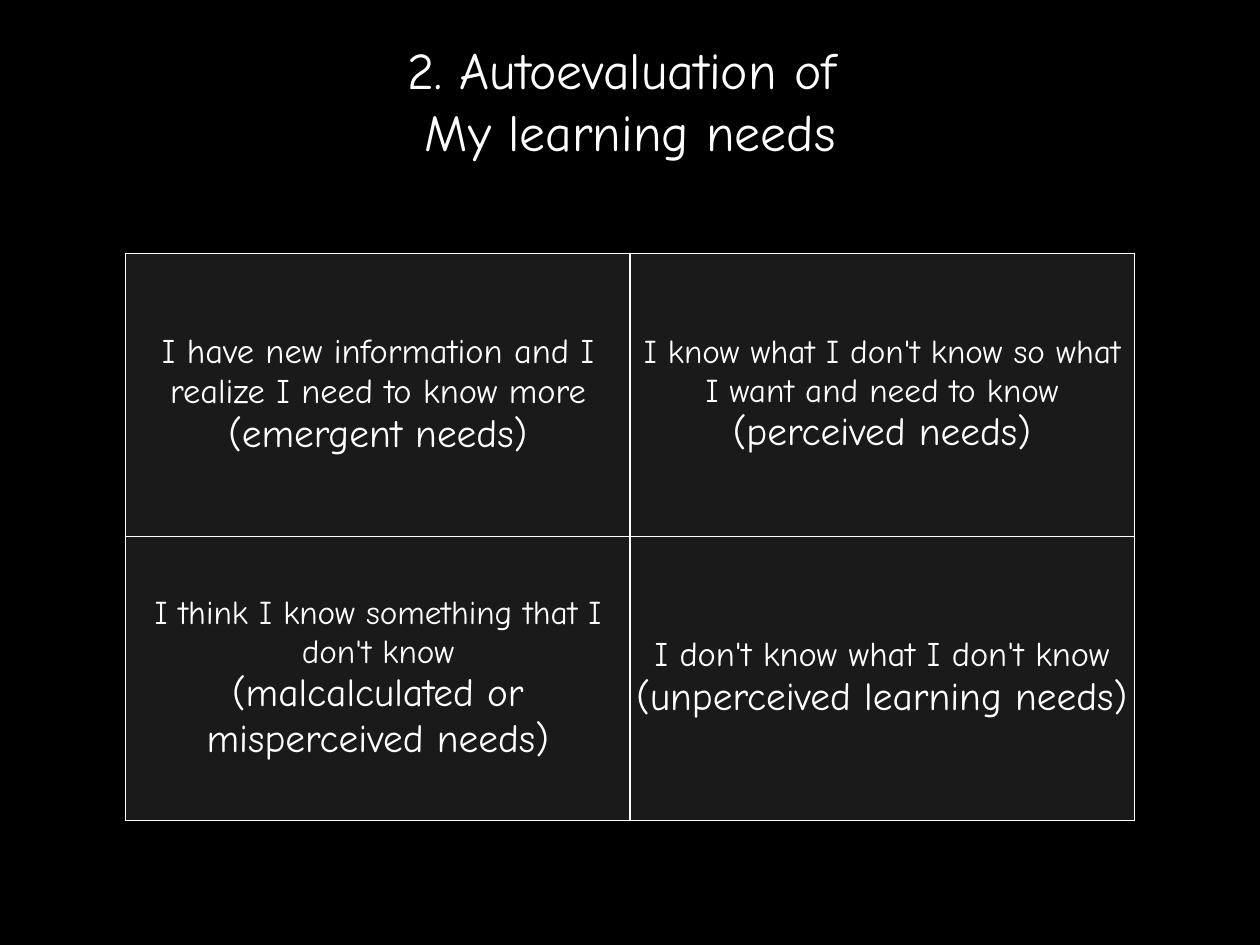
from lxml import etree
from pptx import Presentation
from pptx.dml.color import RGBColor
from pptx.enum.text import MSO_ANCHOR, MSO_AUTO_SIZE, PP_ALIGN
from pptx.oxml.ns import qn
from pptx.util import Cm, Pt

MIDDLE = MSO_ANCHOR.MIDDLE
CENTER = PP_ALIGN.CENTER
NO_AUTOFIT = MSO_AUTO_SIZE.NONE
TITLE_ONLY = 5

COLORS = {"background": "000000", "text": "FFFFFF", "cell": "FFFFFF", "border": "FFFFFF"}
INSET = Cm(0.15)
CELL_OPACITY = 10
NEED_SIZE = 32

TITLE = ["2. Autoevaluation of ", "My learning needs"]

# Each cell holds paragraphs, and each paragraph holds (text, size) runs.
NEEDS = [
    [
        [[("I have new information and I realize I need to know more", 28)],
         [("(emergent needs)", NEED_SIZE)]],
        [[("I know what I don't know so what I want and need to know", 27)],
         [("(perceived needs)", NEED_SIZE)]],
    ],
    [
        [[("I think I know something that I don't know", 27)],
         [("(malcalculated or misperceived needs)", NEED_SIZE)]],
        [[("I don't know what I don't know ", 28),
          ("(unperceived learning needs)", NEED_SIZE)]],
    ],
]


class SlideBuilder:
    font = "Comic Neue"

    def __init__(self, prs):
        self.s = prs.slides.add_slide(prs.slide_layouts[TITLE_ONLY])
        fill = self.s.background.fill
        fill.solid()
        fill.fore_color.rgb = self.color("background")

    def color(self, name):
        return RGBColor.from_string(COLORS[name])

    def paragraphs(self, tf, contents):
        """Write one centred paragraph for each list of (text, size) runs."""
        for i, runs in enumerate(contents):
            p = tf.paragraphs[0] if i == 0 else tf.add_paragraph()
            p.alignment = CENTER
            p.font.name = self.font
            p.font.bold = False
            p.font.color.rgb = self.color("text")
            sizes = {size for _, size in runs}
            if len(sizes) == 1:
                p.font.size = Pt(sizes.pop())
            for text, size in runs:
                r = p.add_run()
                r.text = text
                if len(runs) > 1:
                    r.font.size = Pt(size)

    def inset(self, box):
        box.margin_left = box.margin_right = INSET
        box.margin_top = box.margin_bottom = INSET
        box.vertical_anchor = MIDDLE

    def title(self, lines, left, top, width, height, size):
        sp = self.s.shapes.title
        sp.left, sp.top, sp.width, sp.height = left, top, width, height
        tf = sp.text_frame
        tf.word_wrap = True
        tf.auto_size = NO_AUTOFIT
        self.inset(tf)
        self.paragraphs(tf, [[(line, size)] for line in lines])

    def table(self, rows, left, top, width, height):
        frame = self.s.shapes.add_table(len(rows), len(rows[0]), left, top, width, height)
        table = frame.table
        table.first_row = table.horz_banding = False
        for i, row in enumerate(rows):
            for j, contents in enumerate(row):
                self.cell(table.cell(i, j), contents)

    def cell(self, cell, contents):
        self.inset(cell)
        self.paragraphs(cell.text_frame, contents)
        cell.fill.solid()
        cell.fill.fore_color.rgb = self.color("cell")
        tc_pr = cell._tc.get_or_add_tcPr()
        rgb = tc_pr.find(qn("a:solidFill")).find(qn("a:srgbClr"))
        etree.SubElement(rgb, qn("a:alpha"), val=str(CELL_OPACITY * 1000))
        for i, side in enumerate(("lnL", "lnR", "lnT", "lnB")):
            ln = etree.Element(qn(f"a:{side}"), w=str(Pt(1)))
            line_fill = etree.SubElement(ln, qn("a:solidFill"))
            etree.SubElement(line_fill, qn("a:srgbClr"), val=COLORS["border"])
            tc_pr.insert(i, ln)


def main():
    prs = Presentation()
    prs.slide_width, prs.slide_height = Cm(36.12), Cm(27.1)
    slide = SlideBuilder(prs)
    slide.title(TITLE, Cm(2.29), Cm(0.84), Cm(31.55), Cm(4.06), 42)
    slide.table(NEEDS, Cm(3.61), Cm(7.26), Cm(28.9), Cm(16.26))
    prs.save("out.pptx")


if __name__ == "__main__":
    main()
